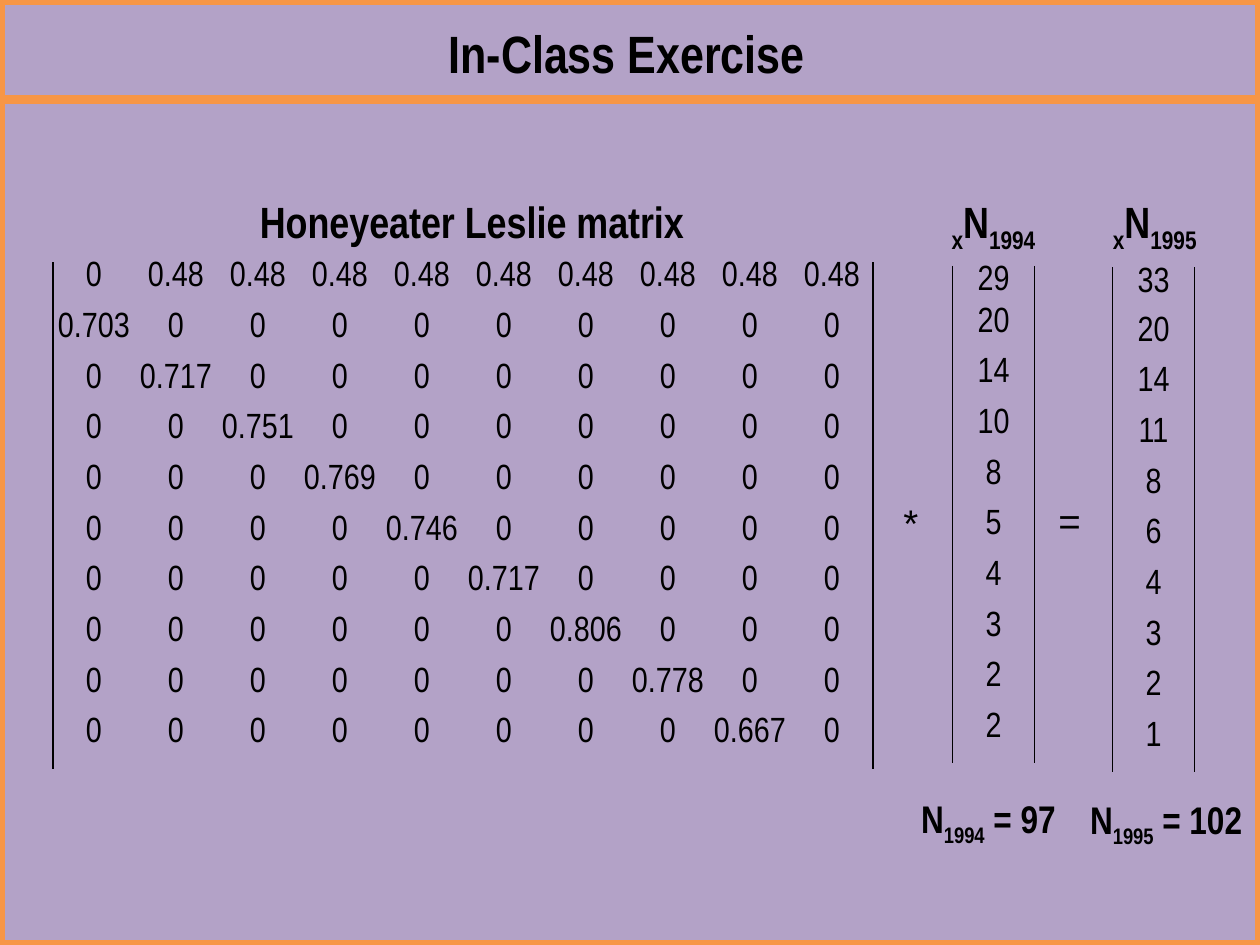
import lxml.etree
import pptx
import pptx.dml.color
import pptx.enum.shapes
import pptx.enum.text
import pptx.oxml.ns
import pptx.util

Inches = pptx.util.Inches
Pt = pptx.util.Pt
RGBColor = pptx.dml.color.RGBColor
qn = pptx.oxml.ns.qn
CENTER = pptx.enum.text.PP_ALIGN.CENTER
LEFT = pptx.enum.text.PP_ALIGN.LEFT

BLACK = RGBColor(0x00, 0x00, 0x00)
LAVENDER = RGBColor(0xB3, 0xA2, 0xC7)
ORANGE = RGBColor(0xF7, 0x96, 0x46)
PLAIN_TABLE = "{2D5ABB26-0587-4C30-8999-92F81FD0307C}"

# Content
TITLE = "In-Class Exercise"
FECUNDITY = "0.48"
SURVIVAL = ["0.703", "0.717", "0.751", "0.769", "0.746",
            "0.717", "0.806", "0.778", "0.667"]
COUNTS_1994 = ["29", "20", "14", "10", "8", "5", "4", "3", "2", "2"]
COUNTS_1995 = ["33", "20", "14", "11", "8", "6", "4", "3", "2", "1"]

# Each label: spans of (text, baseline), box in inches, size in points
LABELS = [
    ([("Honeyeater Leslie matrix", 0)], (1.83, 1.5, 3.83, 0.52), 25),
    ([("x", -25), ("N", 0), ("1994", -25)], (7.3, 1.5, 1.17, 0.52), 25),
    ([("x", -25), ("N", 0), ("1995", -25)], (8.58, 1.5, 1.17, 0.52), 25),
    ([("N", 0), ("1994", -25), (" = 97", 0)], (7.11, 6.26, 1.47, 0.47), 22),
    ([("N", 0), ("1995", -25), (" = 102", 0)], (8.42, 6.27, 1.67, 0.49), 22),
]

# Grid
AGES = len(SURVIVAL) + 1
COLUMN = 6.51 / AGES
ROW = 4.02 / AGES


def write(frame, spans, size, font="Arial Narrow", bold=False, align=CENTER,
          spacing=1.0):
    para = frame.paragraphs[0]
    para.alignment = align
    para.line_spacing = spacing
    for text, baseline in spans:
        span = para.add_run()
        span.text = text
        span.font.size = Pt(size)
        span.font.name = font
        span.font.bold = bold
        span.font.color.rgb = BLACK
        if baseline:
            span.font._element.set("baseline", str(baseline * 1000))


def fit(frame):
    frame.word_wrap = True
    frame.auto_size = pptx.enum.text.MSO_AUTO_SIZE.SHAPE_TO_FIT_TEXT
    frame.vertical_anchor = pptx.enum.text.MSO_ANCHOR.TOP


def draw_sides(cell, sides):
    properties = cell._tc.get_or_add_tcPr()
    for index, side in enumerate(sides):
        line = lxml.etree.Element(qn("a:ln" + side), w=str(Pt(1)))
        fill = lxml.etree.SubElement(line, qn("a:solidFill"))
        lxml.etree.SubElement(fill, qn("a:srgbClr"), val=str(BLACK))
        properties.insert(index, line)


def add_grid(page, rows, left, top, width, heights, bars=True, **style):
    """Add a clear table, with a bar on each outer side for a matrix."""
    columns = len(rows[0])
    shape = page.shapes.add_table(len(rows), columns, Inches(left), Inches(top),
                                  Inches(width * columns), Inches(sum(heights)))
    table = shape.table
    table.first_row = table.horz_banding = False
    shape._element.find(".//" + qn("a:tableStyleId")).text = PLAIN_TABLE
    for column in table.columns:
        column.width = Inches(width)
    for r, row in enumerate(rows):
        table.rows[r].height = Inches(heights[r])
        for c, value in enumerate(row):
            cell = table.cell(r, c)
            cell.fill.background()
            if bars:
                cell.margin_left = cell.margin_right = Inches(0.03)
                cell.margin_top = cell.margin_bottom = Inches(0.03)
                draw_sides(cell, "L" * (c == 0) + "R" * (c == columns - 1))
            write(cell.text_frame, [(value, 0)], **style)


def main():
    deck = pptx.Presentation()
    deck.slide_width, deck.slide_height = Inches(10), Inches(7.5)
    page = deck.slides.add_slide(deck.slide_layouts[5])
    page.background.fill.solid()
    page.background.fill.fore_color.rgb = LAVENDER

    # Frame and rule under the title
    border = page.shapes.add_shape(pptx.enum.shapes.MSO_SHAPE.RECTANGLE, 0, 0,
                                   deck.slide_width, deck.slide_height)
    border.shadow.inherit = False
    border.fill.background()
    rule = page.shapes.add_connector(pptx.enum.shapes.MSO_CONNECTOR.STRAIGHT,
                                     0, Inches(0.79), deck.slide_width, Inches(0.79))
    lxml.etree.SubElement(rule._element.spPr, qn("a:effectLst"))
    for shape, weight in ((border, 6), (rule, 5)):
        shape.line.color.rgb = ORANGE
        shape.line.width = Pt(weight)

    # Title
    title = page.shapes.title
    title.left, title.top = Inches(0.74), Inches(0.12)
    title.width, title.height = Inches(8.47), Inches(0.61)
    fit(title.text_frame)
    write(title.text_frame, [(TITLE, 0)], size=30, bold=True)

    # Leslie matrix: fecundity on top, survival below the diagonal
    matrix = [["0"] + [FECUNDITY] * (AGES - 1)]
    for age, rate in enumerate(SURVIVAL):
        matrix.append([rate if c == age else "0" for c in range(AGES)])
    number = {"size": 20, "spacing": 0.8}
    add_grid(page, matrix, 0.42, 2.08, COLUMN, [ROW] * AGES, **number)

    # Population vectors, whose first row is a little lower than the others
    for counts, left, top, first in ((COUNTS_1994, 7.56, 2.11, 0.33),
                                     (COUNTS_1995, 8.83, 2.12, 0.39)):
        add_grid(page, [[count] for count in counts], left, top, COLUMN,
                 [first] + [ROW] * (AGES - 1), **number)

    # Operators
    for sign, left, top, width in (("*", 7.07, 3.94, 0.36), ("=", 8.3, 3.92, 0.25)):
        add_grid(page, [[sign]], left, top, width, [0.5], bars=False,
                 size=22, font="Arial", align=LEFT)

    # Headings and totals
    for spans, place, size in LABELS:
        box = page.shapes.add_textbox(*map(Inches, place))
        fit(box.text_frame)
        write(box.text_frame, spans, size=size, bold=True)

    deck.save("out.pptx")


if __name__ == "__main__":
    main()
